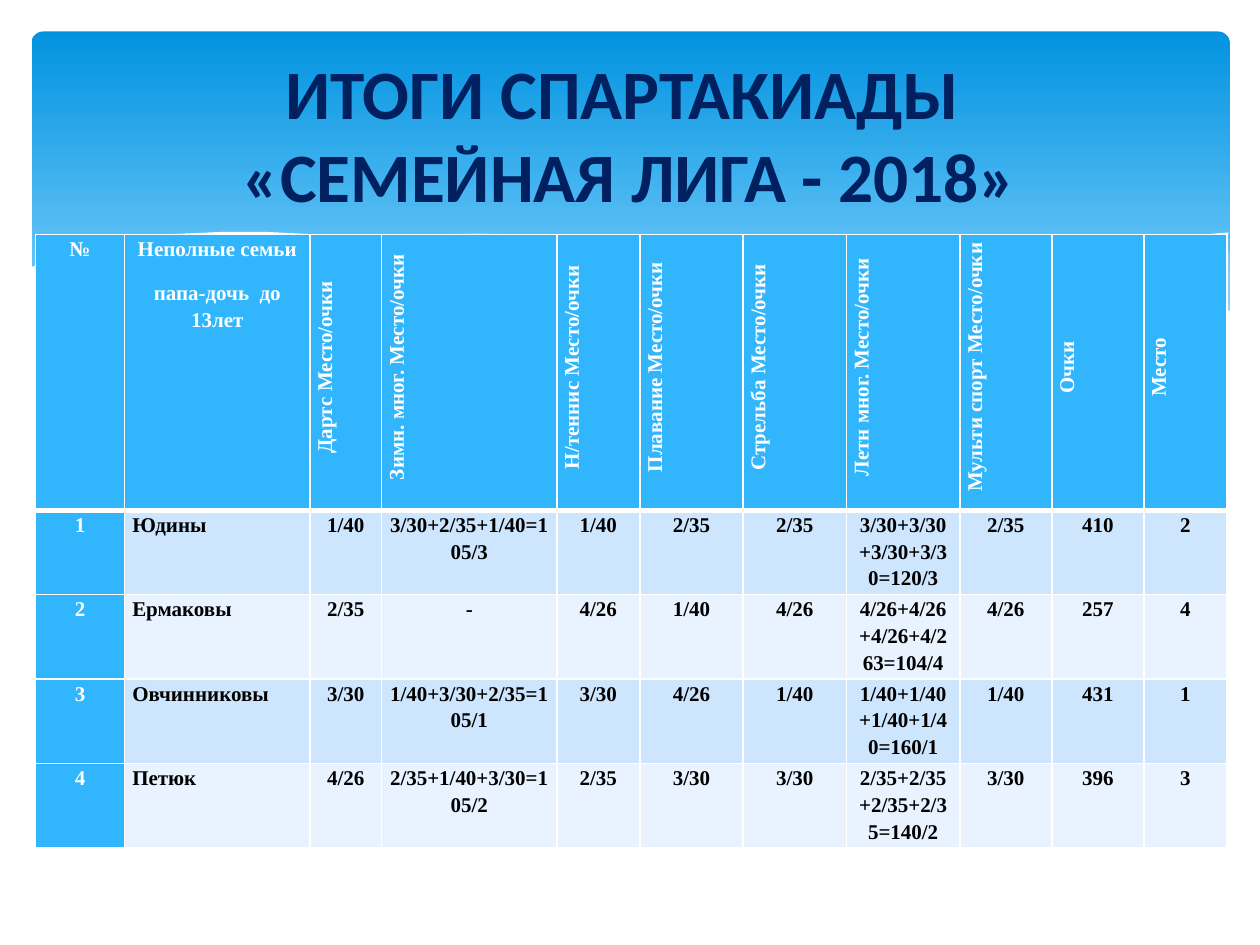
from lxml.etree import SubElement
from pptx import Presentation
from pptx.dml.color import RGBColor
from pptx.enum.shapes import MSO_SHAPE
from pptx.enum.text import MSO_ANCHOR, PP_ALIGN
from pptx.oxml import parse_xml
from pptx.oxml.ns import nsdecls, qn
from pptx.util import Inches, Pt

WHITE = RGBColor(0xFF, 0xFF, 0xFF)
BLACK = RGBColor(0, 0, 0)
NAVY = RGBColor(0x00, 0x20, 0x60)
DEEP = RGBColor(0x02, 0x93, 0xE0)
SKY = RGBColor(0x83, 0xD3, 0xFE)
BLUE = RGBColor(0x31, 0xB6, 0xFD)
PALE = RGBColor(0xC6, 0xE7, 0xFC)
BANDS = [RGBColor(0xCE, 0xE5, 0xFE), RGBColor(0xE8, 0xF3, 0xFF)]

deck = Presentation()
deck.slide_width, deck.slide_height = Inches(10), Inches(7.5)
unit = deck.slide_width // 1000
slide = deck.slides.add_slide(deck.slide_layouts[5])
shapes = slide.shapes


def draw_wave(points, color, alpha=100, closed=True):
    (x, y), *rest = points
    pen = shapes.build_freeform(x, y, scale=unit)
    pen.add_line_segments(rest, close=closed)
    wave = pen.convert_to_shape()
    wave.shadow.inherit = False
    if closed:
        wave.fill.solid()
        wave.fill.fore_color.rgb = color
        wave.line.fill.background()
        tint = wave._element.spPr.find(".//" + qn("a:srgbClr"))
        SubElement(tint, qn("a:alpha"), val=str(alpha * 1000))
    else:
        wave.fill.background()
        wave.line.color.rgb = color
        wave.line.width = Pt(0)


def set_edge(cell, side, width, place):
    cell._tc.get_or_add_tcPr().insert(place, parse_xml(
        f'<a:{side} {nsdecls("a")} w="{Pt(width)}"><a:solidFill>'
        f'<a:srgbClr val="{WHITE}"/></a:solidFill></a:{side}>'))


panel = shapes.add_shape(MSO_SHAPE.ROUNDED_RECTANGLE,
                         25 * unit, 25 * unit, 951 * unit, 270 * unit)
panel.adjustments[0] = 0.034
panel.shadow.inherit = False
panel.line.fill.background()
panel.fill.gradient()
panel.fill.gradient_angle = 270
for stop, color, spot in zip(panel.fill.gradient_stops, (DEEP, SKY), (0, 0.9)):
    stop.color.rgb, stop.position = color, spot

draw_wave([(976, 200), (948, 204), (906, 213), (861, 223), (805, 237),
           (753, 248), (706, 257), (661, 265), (705, 271), (757, 276),
           (814, 278), (863, 275), (905, 269), (942, 259), (976, 247)], PALE, 29)
draw_wave([(893, 273), (837, 265), (775, 254), (706, 240), (629, 222),
           (569, 208), (514, 198), (465, 191), (420, 187), (380, 185),
           (328, 187), (286, 191), (342, 199), (404, 211), (491, 232),
           (566, 248), (634, 261), (695, 270), (748, 276), (796, 278),
           (848, 277)], PALE, 40)
draw_wave([(309, 195), (344, 190), (387, 187), (433, 187), (489, 190),
           (556, 197), (636, 208), (727, 226), (831, 251), (907, 272)],
          WHITE, closed=False)
draw_wave([(613, 257), (672, 241), (748, 223), (836, 204), (895, 194),
           (938, 188), (975, 185)], WHITE, closed=False)
draw_wave([(977, 246), (940, 259), (899, 269), (850, 275), (809, 277),
           (761, 275), (708, 270), (648, 262), (579, 250), (503, 233),
           (447, 220), (391, 207), (340, 197), (292, 190), (250, 186),
           (211, 184), (177, 184), (132, 186), (95, 191), (67, 197),
           (46, 203), (36, 207), (23, 213), (23, 329), (977, 329)], WHITE)

heads = ["№", "Неполные семьи\nпапа-дочь  до 13лет", "Дартс Место/очки",
         "Зимн. мног. Место/очки", "Н/теннис Место/очки", "Плавание Место/очки",
         "Стрельба Место/очки", "Летн мног. Место/очки",
         "Мульти спорт Место/очки", "Очки", "Место"]
teams = [
    ["1", "Юдины", "1/40", "3/30+2/35+1/40=105/3", "1/40", "2/35", "2/35",
     "3/30+3/30+3/30+3/30=120/3", "2/35", "410", "2"],
    ["2", "Ермаковы", "2/35", "-", "4/26", "1/40", "4/26",
     "4/26+4/26+4/26+4/263=104/4", "4/26", "257", "4"],
    ["3", "Овчинниковы", "3/30", "1/40+3/30+2/35=105/1", "3/30", "4/26", "1/40",
     "1/40+1/40+1/40+1/40=160/1", "1/40", "431", "1"],
    ["4", "Петюк", "4/26", "2/35+1/40+3/30=105/2", "2/35", "3/30", "3/30",
     "2/35+2/35+2/35+2/35=140/2", "3/30", "396", "3"],
]
rows = [heads] + teams
wide = [71, 147, 57, 139, 66, 82, 82, 90, 73, 73, 66]
tall = [219, 67, 67, 67, 67]
table = shapes.add_table(len(rows), len(wide), 28 * unit, 186 * unit,
                         sum(wide) * unit, sum(tall) * unit).table
for column, size in zip(table.columns, wide):
    column.width = size * unit
for line, size in zip(table.rows, tall):
    line.height = size * unit

for r, row in enumerate(rows):
    for c, text in enumerate(row):
        cell = table.cell(r, c)
        cell.margin_left = cell.margin_right = 6 * unit
        cell.margin_top = cell.margin_bottom = 0
        dark = r == 0 or c == 0
        cell.fill.solid()
        cell.fill.fore_color.rgb = BLUE if dark else BANDS[(r - 1) % 2]
        edges = {"lnL": 1, "lnR": 1, "lnT": 3 if r == 1 else 1,
                 "lnB": 3 if r == 0 else 1}
        for place, (side, width) in enumerate(edges.items()):
            set_edge(cell, side, width, place)
        cell.text = text
        turned = r == 0 and c > 1
        if turned:
            cell._tc.tcPr.set("vert", "vert270")
        for para in cell.text_frame.paragraphs:
            para.alignment = PP_ALIGN.LEFT if r and c == 1 else PP_ALIGN.CENTER
            para.line_spacing = 1.15
            para.space_after = Pt(10)
            para.font.name = "Times New Roman"
            para.font.size = Pt(12)
            para.font.bold = True
            para.font.color.rgb = WHITE if dark else BLACK
            if turned:
                para._p.get_or_add_pPr().set("marL", str(8 * unit))

title = shapes.title
title.left, title.top = 50 * unit, 37 * unit
title.width, title.height = 900 * unit, 137 * unit
frame = title.text_frame
frame.vertical_anchor = MSO_ANCHOR.MIDDLE
para = frame.paragraphs[0]
para.text = "ИТОГИ СПАРТАКИАДЫ \n«СЕМЕЙНАЯ ЛИГА - 2018»"
para.alignment = PP_ALIGN.CENTER
para.font.name = "Calibri"
para.font.size = Pt(39.6)
para.font.bold = True
para.font.color.rgb = NAVY
shapes._spTree.append(title._element)

deck.save("out.pptx")
